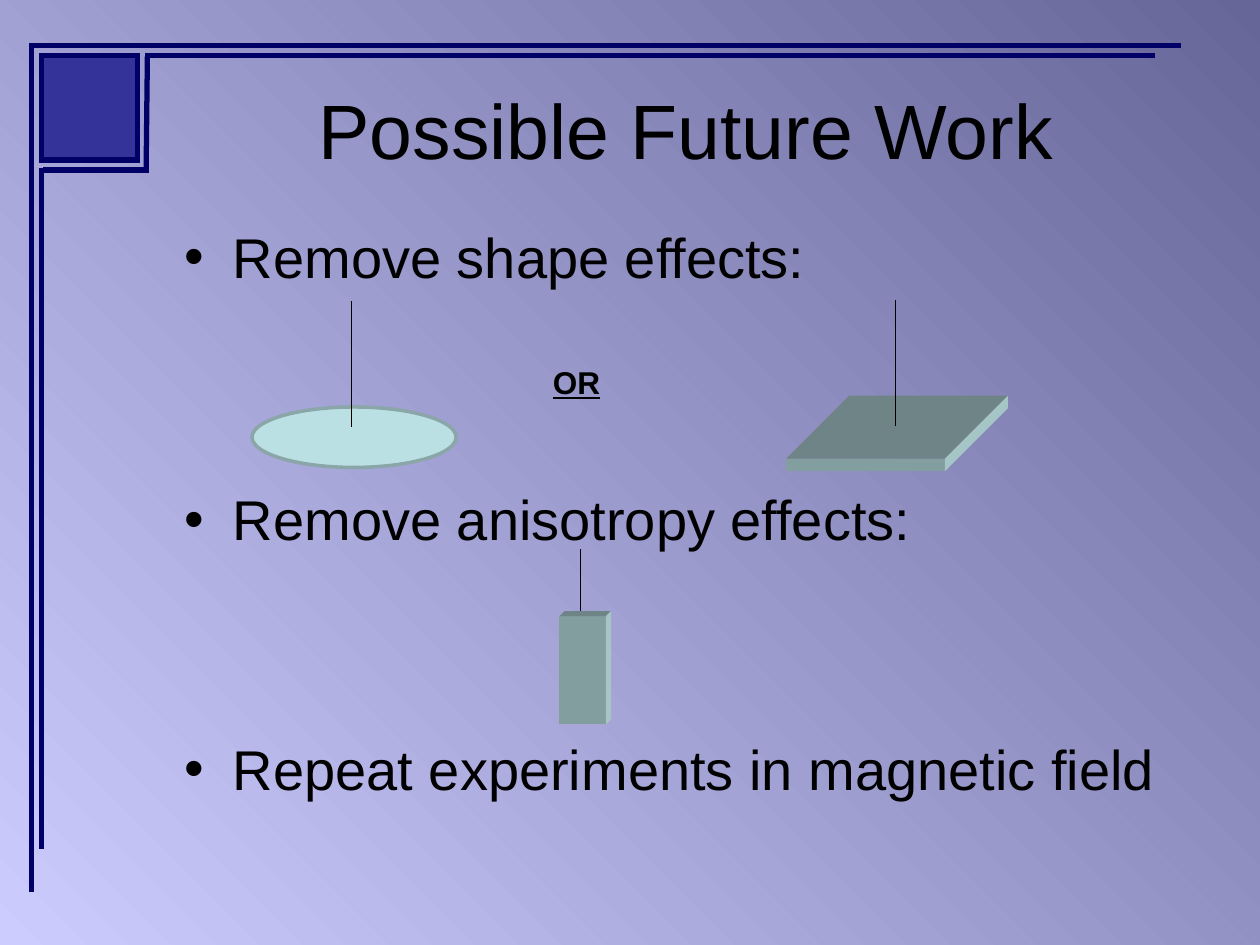
from lxml import etree
from pptx import Presentation
from pptx.dml.color import RGBColor
from pptx.enum import shapes, text
from pptx.oxml import ns
from pptx.util import Inches, Pt

TITLE = "Possible Future Work"
BULLETS = [  # text, top
    ("Remove shape effects:", 1.72),
    ("Remove anisotropy effects:", 3.8),
    ("Repeat experiments in magnetic field", 5.78),
]
NAVY, BLACK = "000066", "000000"
FRAME = [  # x1, y1, x2, y2
    (1.17, 0.45, 1.16, 1.33), (0.25, 1.36, 0.25, 7.08),
    (1.11, 0.44, 0.31, 0.44), (0.33, 0.44, 0.33, 1.28),
    (9.37, 0.36, 0.24, 0.36), (1.18, 0.36, 0.23, 0.36),
    (0.25, 0.36, 0.25, 1.36), (9.17, 0.44, 1.15, 0.44),
    (1.09, 1.27, 0.31, 1.27), (1.18, 1.35, 0.34, 1.35),
    (1.09, 0.45, 1.09, 1.29), (0.33, 1.33, 0.33, 6.74),
]
THREADS = [(2.79, 2.39, 2.79, 3.39), (7.11, 2.38, 7.11, 3.38),
           (4.61, 4.36, 4.61, 4.85)]
SLAB = (6.24, 3.64, 1.26, 0.1, 0.5)  # left, top, width, height, depth
BAR = (4.44, 4.89, 0.37, 0.86, 0.04)


def rgb(value):
    return RGBColor.from_string(value)


def paint(sp, fill, line=None, width=0.75):
    sp.shadow.inherit = False
    sp.fill.solid()
    sp.fill.fore_color.rgb = rgb(fill)
    if line:
        sp.line.color.rgb = rgb(line)
        sp.line.width = Pt(width)
    else:
        sp.line.fill.background()


def add_line(s, ends, color, width):
    c = s.shapes.add_connector(shapes.MSO_CONNECTOR.STRAIGHT, *map(Inches, ends))
    c.line.color.rgb = rgb(color)
    c.line.width = Pt(width)
    etree.SubElement(c._element.spPr, ns.qn("a:effectLst"))


def add_block(s, x, y, w, h, d):
    """Draw the front, top and right faces of an extruded box."""
    faces = [
        ("839E9F", [(x, y), (x + w, y), (x + w, y + h), (x, y + h)]),
        ("6F8486", [(x, y), (x + d, y - d), (x + w + d, y - d), (x + w, y)]),
        ("A5C5C7", [(x + w, y), (x + w + d, y - d),
                    (x + w + d, y + h - d), (x + w, y + h)]),
    ]
    for color, points in faces:
        pts = [(Inches(a), Inches(b)) for a, b in points]
        fb = s.shapes.build_freeform(*pts[0])
        fb.add_line_segments(pts[1:], close=True)
        paint(fb.convert_to_shape(), color)


def add_text(s, box, words, size, bullet=False):
    tf = s.shapes.add_textbox(*map(Inches, box)).text_frame
    tf.word_wrap = True
    tf.text = words
    p = tf.paragraphs[0]
    if bullet:
        pPr = p._p.get_or_add_pPr()
        pPr.set("marL", str(Inches(0.38)))
        pPr.set("indent", str(-Inches(0.38)))
        etree.SubElement(pPr, ns.qn("a:buFont")).set("typeface", "Arial")
        etree.SubElement(pPr, ns.qn("a:buChar")).set("char", "•")
    r = p.runs[0]
    r.font.size = Pt(size)
    r.font.name = "Arial"
    r.font.color.rgb = rgb(BLACK)
    return tf


prs = Presentation()
prs.slide_width, prs.slide_height = Inches(10), Inches(7.5)
s = prs.slides.add_slide(prs.slide_layouts[6])

# Background
bg = s.background.fill
bg.gradient()
bg.gradient_angle = 45
for stop, color, at in zip(bg.gradient_stops, ("CCCCFF", "666699"), (0, 1)):
    stop.color.rgb = rgb(color)
    stop.position = at

# Corner square and frame
corner = s.shapes.add_shape(shapes.MSO_SHAPE.RECTANGLE,
                            *map(Inches, (0.33, 0.44, 0.75, 0.83)))
paint(corner, "333399", BLACK)
for ends in FRAME:
    add_line(s, ends, NAVY, 3)

# Title and bullets
tf = add_text(s, (1.39, 0.49, 8.11, 1.06), TITLE, 44)
tf.vertical_anchor = text.MSO_ANCHOR.MIDDLE
tf.paragraphs[0].alignment = text.PP_ALIGN.CENTER
for words, top in BULLETS:
    add_text(s, (1.37, top, 8.13, 0.73), words, 32, bullet=True)

# Hanging disc, slab and bar
disc = s.shapes.add_shape(shapes.MSO_SHAPE.OVAL,
                          *map(Inches, (2, 3.23, 1.62, 0.48)))
paint(disc, "BBE0E3", "8AA6A8", 2)
for block in (SLAB, BAR):
    add_block(s, *block)
for ends in THREADS:
    add_line(s, ends, BLACK, 0.75)

# Choice between the two shapes
tf = add_text(s, (4.29, 2.83, 0.7, 0.4), "OR", 18)
font = tf.paragraphs[0].runs[0].font
font.bold = font.underline = True

prs.save("out.pptx")
